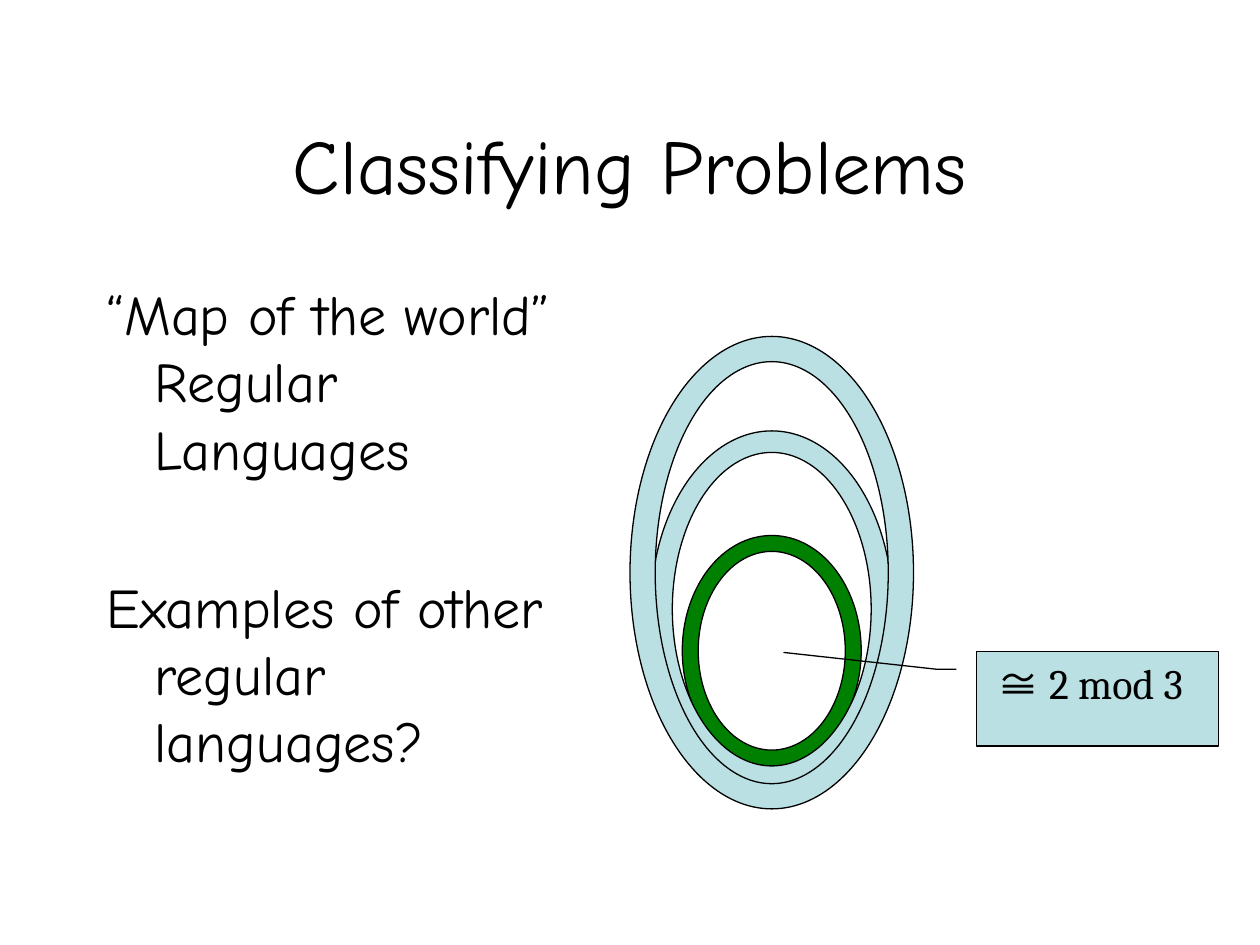
from dataclasses import dataclass

from lxml import etree
from pptx import Presentation
from pptx.dml.color import RGBColor
from pptx.enum import shapes, text
from pptx.oxml import ns
from pptx.util import Inches, Pt


@dataclass(frozen=True)
class Theme:
    """Colours, fonts and type sizes of the slide."""
    ink: RGBColor = RGBColor(0, 0, 0)
    pale: RGBColor = RGBColor(0xBB, 0xE0, 0xE3)
    green: RGBColor = RGBColor(0, 0x80, 0)
    hand: str = "Comic Neue"
    serif: str = "Cambria"
    sign: str = "Noto Sans CJK JP"
    title: int = 44
    body: int = 32
    note: int = 24
    line: float = 0.75


THEME = Theme()


def style(para, face, size):
    """Set the font of a paragraph."""
    para.font.name = face
    para.font.size = Pt(size)
    para.font.color.rgb = THEME.ink


def add_text(slide, box):
    """Add an empty wrapping text box and return its frame."""
    frame = slide.shapes.add_textbox(*map(Inches, box)).text_frame
    frame.word_wrap = True
    return frame


def add_form(slide, kind, box, fill, adjust):
    """Add an outlined preset shape with its adjustments."""
    form = slide.shapes.add_shape(kind, *map(Inches, box))
    form.shadow.inherit = False
    form.fill.solid()
    form.fill.fore_color.rgb = fill
    form.line.color.rgb = THEME.ink
    form.line.width = Pt(THEME.line)
    for i, value in enumerate(adjust):
        form.adjustments[i] = value
    return form


def add_title(slide, box, words):
    """Place the centred title."""
    frame = add_text(slide, box)
    frame.vertical_anchor = text.MSO_ANCHOR.MIDDLE
    para = frame.paragraphs[0]
    para.text = words
    para.alignment = text.PP_ALIGN.CENTER
    style(para, THEME.hand, THEME.title)


def add_body(slide, box, items):
    """Place paragraphs with hanging indents, given as words and space before."""
    frame = add_text(slide, box)
    for i, (words, gap) in enumerate(items):
        para = frame.add_paragraph() if i else frame.paragraphs[0]
        para.text = words
        para.space_before = Pt(gap)
        props = para._p.get_or_add_pPr()
        props.set("marL", str(Inches(0.38)))
        props.set("indent", str(-Inches(0.38)))
        style(para, THEME.hand, THEME.body)


def add_rings(slide, box, sizes):
    """Nest rings on one centre line, inner first, given as top, width, height and fill."""
    left, top, width, _ = box
    for drop, wide, high, fill in sizes:
        place = (left + (width - wide) / 2, top + drop, wide, high)
        add_form(slide, shapes.MSO_SHAPE.DONUT, place, fill, [0.089])


def add_note(slide, box, sign, words):
    """Place the callout whose leader points into the inner ring."""
    bends = [0.188, -0.083, 0.188, -0.167, 0.011, -0.798]
    form = add_form(slide, shapes.MSO_SHAPE.LINE_CALLOUT_2, box, THEME.pale, bends)
    frame = form.text_frame
    frame.vertical_anchor = text.MSO_ANCHOR.TOP
    frame.margin_left = Inches(0.17)
    para = frame.paragraphs[0]
    para.alignment = text.PP_ALIGN.LEFT
    style(para, THEME.serif, THEME.note)
    mark = para.add_run()
    mark.text = sign
    mark.font.name = THEME.sign
    etree.SubElement(mark.font._element, ns.qn("a:ea"), typeface=THEME.sign)
    para.add_run().text = words


def main():
    """Build and save the slide."""
    deck = Presentation()
    deck.slide_width, deck.slide_height = Inches(10), Inches(7.5)
    slide = deck.slides.add_slide(deck.slide_layouts[6])
    add_title(slide, (0.75, 0.67, 8.5, 1.25), "Classifying Problems")
    add_body(slide, (0.75, 2.17, 4.17, 4.5), [
        ("“Map of the world”\vRegular Languages", 6.4),
        ("Examples of other regular languages?", 52),
    ])
    add_rings(slide, (5, 2.67, 2.25, 3.75), [
        (1.58, 1.42, 1.83, THEME.green),
        (0.75, 1.92, 2.83, THEME.pale),
        (0, 2.25, 3.75, THEME.pale),
    ])
    add_note(slide, (7.75, 5.17, 1.92, 0.75), "≅", " 2 mod 3")
    deck.save("out.pptx")


if __name__ == "__main__":
    main()
